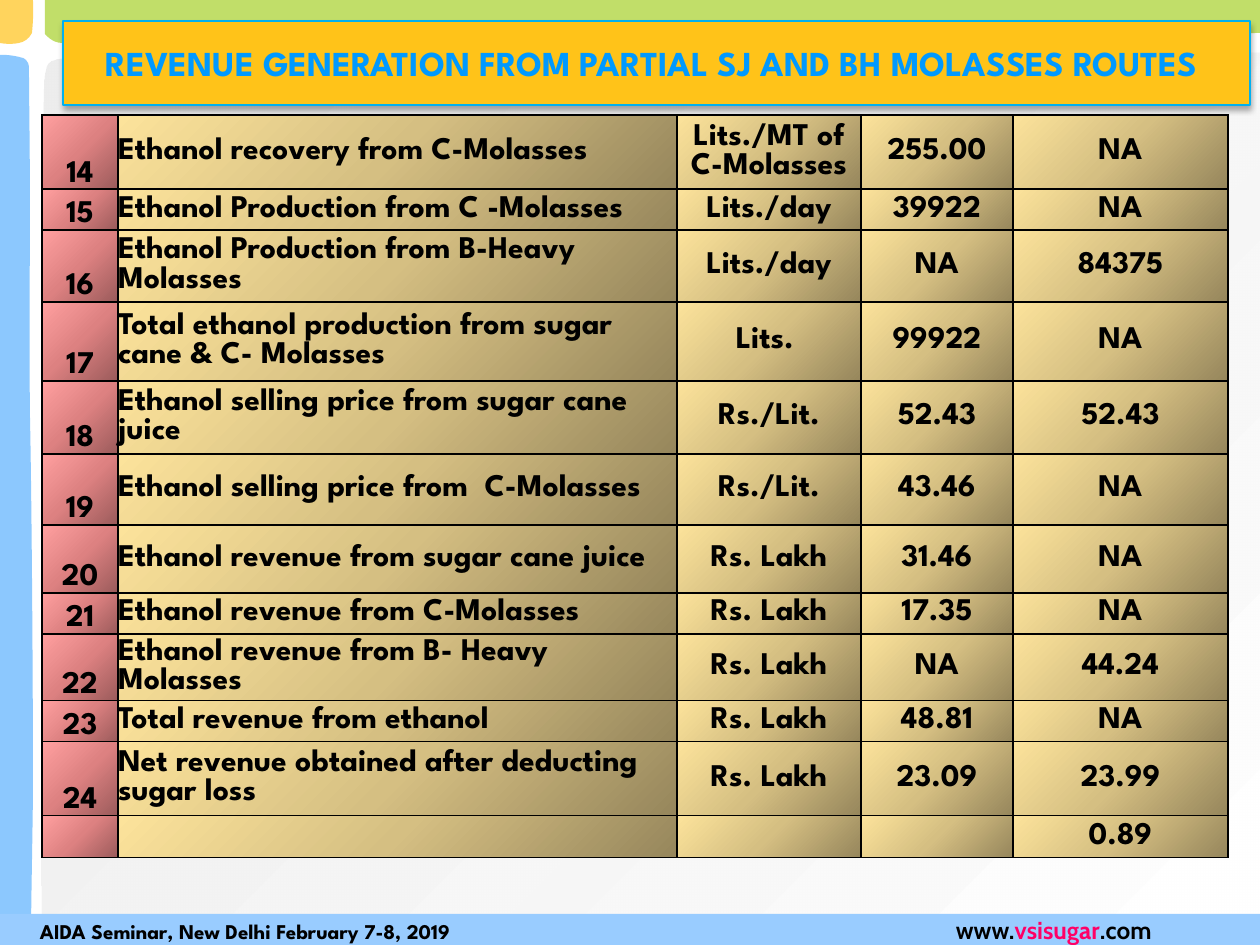
from pptx import Presentation
from pptx.dml.color import RGBColor
from pptx.enum.shapes import MSO_SHAPE
from pptx.enum.text import MSO_ANCHOR, PP_ALIGN
from pptx.oxml import parse_xml
from pptx.oxml.ns import nsdecls, qn
from pptx.util import Pt

SCALE = 914400 / 126
HEADING_FONT = "League Spartan"
ADDRESS_FONT = "Cabin"
COLORS = {
    "black": "000000", "gray": "E6E6E6", "white": "FFFFFF",
    "green": "A8D02A", "blue": "5CB1FE", "amber": "FFC319",
    "footer": "99CCFF", "pink": "FF0066", "title": "0099FF", "cyan": "00B0F0",
    "dark red": "9B5B5B", "red": "DD8181", "light red": "FFA0A0",
    "dark gold": "96865C", "gold": "D5BF82", "light gold": "FCE39B",
}
PANEL_STOPS = [(0, "gray", 70), (100, "white", 100)]
NUMBER_STOPS = [(0, "dark red", 100), (50, "red", 100), (100, "light red", 100)]
VALUE_STOPS = [(0, "dark gold", 100), (50, "gold", 100), (100, "light gold", 100)]

PANEL_OUTLINE = [
    (1220, 897), (1220, 5), (1076, 0, 1037, 5, 918, 5),
    (799, 5, 653, 6, 506, 5), (358, 4, 115, 4, 32, 9),
    (5, 12, 5, 13, 4, 44), (3, 73, 4, 91, 4, 181),
    (4, 275, 3, 471, 3, 590), (3, 709, 0, 786, 2, 897),
    (611, 897, 1220, 897, 1220, 897),
]
GREEN_OUTLINE = [
    (1215, 0), (1215, 33), (1216, 32, 1124, 39, 1003, 40),
    (882, 42, 624, 38, 492, 39), (359, 42, 289, 39, 211, 39),
    (131, 40, 52, 43, 17, 43), (7, 43, 0, 34, 0, 34),
    (0, 34, 0, 18, 0, 0), (1215, 0),
]
BLUE_OUTLINE = [
    (0, 890), (32, 891), (30, 892, 32, 826, 33, 737),
    (33, 649, 32, 459, 30, 362), (29, 266, 30, 213, 30, 156),
    (30, 98, 29, 41, 29, 14), (29, 6, 23, 4, 23, 4),
    (9, 0, 0, 1, 0, 1), (0, 890),
]
AMBER_OUTLINE = [
    (0, 0), (33, 0), (34, 15, 32, 33, 32, 33),
    (29, 39, 24, 42, 19, 43), (9, 45, 0, 43, 0, 43), (0, 0),
]

COLUMN_WIDTHS = [76, 559, 184, 152, 215]
ROW_HEIGHTS = [74, 41, 72, 79, 73, 71, 68, 41, 67, 41, 74, 42]
ROWS = [
    ("14", "Ethanol recovery from C-Molasses", "Lits./MT of C-Molasses", "255.00", "NA"),
    ("15", "Ethanol Production from C -Molasses", "Lits./day", "39922", "NA"),
    ("16", "Ethanol Production from B-Heavy Molasses", "Lits./day", "NA", "84375"),
    ("17", "Total ethanol production from sugar cane & C- Molasses", "Lits. ", "99922", "NA"),
    ("18", "Ethanol selling price from sugar cane juice", "Rs./Lit.", "52.43", "52.43"),
    ("19", "Ethanol selling price from  C-Molasses", "Rs./Lit.", "43.46", "NA"),
    ("20", "Ethanol revenue from sugar cane juice", "Rs. Lakh", "31.46", "NA"),
    ("21", "Ethanol revenue from C-Molasses", "Rs. Lakh", "17.35", "NA"),
    ("22", "Ethanol revenue from B- Heavy Molasses", "Rs. Lakh", "NA", "44.24"),
    ("23", "Total revenue from ethanol", "Rs. Lakh", "48.81", "NA"),
    ("24", "Net revenue obtained after deducting sugar loss", "Rs. Lakh", "23.09", "23.99"),
    ("", "", "", "", "0.89"),
]


def px(length):
    return round(length * SCALE)


def color(name):
    return RGBColor.from_string(COLORS[name])


def add_run(paragraph, text, size, font_name, color_name):
    run = paragraph.add_run()
    run.text = text
    run.font.size = Pt(size)
    run.font.name = font_name
    run.font.bold = True
    run.font.color.rgb = color(color_name)


def set_gradient(fill, properties, stops, angle):
    fill.background()
    stop_xml = "".join(
        f'<a:gs pos="{position * 1000}"><a:srgbClr val="{COLORS[name]}">'
        f'<a:alpha val="{opacity * 1000}"/></a:srgbClr></a:gs>'
        for position, name, opacity in stops
    )
    gradient = parse_xml(
        f'<a:gradFill {nsdecls("a")} rotWithShape="1"><a:gsLst>{stop_xml}</a:gsLst>'
        f'<a:lin ang="{angle * 60000}" scaled="0"/></a:gradFill>'
    )
    properties.replace(properties.find(qn("a:noFill")), gradient)


def set_translucent(shape, color_name):
    shape.fill.solid()
    shape.fill.fore_color.rgb = color(color_name)
    value = shape._element.spPr.find(qn("a:solidFill")).find(qn("a:srgbClr"))
    value.append(parse_xml(f'<a:alpha {nsdecls("a")} val="70000"/>'))


def add_outline(slide, left, top, outline):
    points = [
        (left + x, top + y)
        for segment in outline
        for x, y in zip(segment[::2], segment[1::2])
    ]
    builder = slide.shapes.build_freeform(*points[0], scale=SCALE)
    builder.add_line_segments(points[1:], close=True)
    shape = builder.convert_to_shape()
    lines = iter(list(shape._element.iter(qn("a:lnTo"))))
    for segment in outline[1:]:
        first = next(lines)
        if len(segment) == 6:
            curve = parse_xml(f'<a:cubicBezTo {nsdecls("a")}/>')
            first.addprevious(curve)
            for line in (first, next(lines), next(lines)):
                curve.append(line[0])
                line.getparent().remove(line)
    shape.shadow.inherit = False
    shape.line.fill.background()
    return shape


def add_backdrop(slide, left, top):
    panel = add_outline(slide, left + 40, top + 48, PANEL_OUTLINE)
    set_gradient(panel.fill, panel._element.spPr, PANEL_STOPS, 45)
    for x, y, outline, color_name in (
        (45, 0, GREEN_OUTLINE, "green"),
        (0, 54, BLUE_OUTLINE, "blue"),
        (0, 0, AMBER_OUTLINE, "amber"),
    ):
        set_translucent(add_outline(slide, left + x, top + y, outline), color_name)


def add_bar(slide, left, top, width, height, color_name):
    bar = slide.shapes.add_shape(MSO_SHAPE.RECTANGLE, px(left), px(top), px(width), px(height))
    bar.shadow.inherit = False
    bar.fill.solid()
    bar.fill.fore_color.rgb = color(color_name)
    bar.text_frame.word_wrap = True
    bar.text_frame.vertical_anchor = MSO_ANCHOR.MIDDLE
    return bar


def add_footer(slide, left, top, width, height):
    footer = add_bar(slide, left, top, width, height, "footer")
    footer.line.fill.background()
    frame = footer.text_frame
    frame.margin_left = px(40)
    frame.margin_right = frame.margin_top = frame.margin_bottom = 0
    paragraph = frame.paragraphs[0]
    paragraph.alignment = PP_ALIGN.LEFT
    paragraph._p.get_or_add_pPr().append(parse_xml(
        f'<a:tabLst {nsdecls("a")}><a:tab pos="{px(916)}" algn="l"/></a:tabLst>'
    ))
    add_run(paragraph, "AIDA Seminar, New Delhi February 7-8, 2019\t", 12, HEADING_FONT, "black")
    for text, color_name in (("www.", "black"), ("vsisugar", "pink"), (".com", "black")):
        add_run(paragraph, text, 14, ADDRESS_FONT, color_name)


def style_cell(cell, text, column):
    cell.margin_left = cell.margin_right = cell.margin_top = cell.margin_bottom = 0
    cell.vertical_anchor = MSO_ANCHOR.BOTTOM if column == 0 else MSO_ANCHOR.MIDDLE
    properties = cell._tc.get_or_add_tcPr()
    set_gradient(cell.fill, properties, NUMBER_STOPS if column == 0 else VALUE_STOPS, 225)
    for index, side in enumerate(("lnL", "lnR", "lnT", "lnB")):
        properties.insert(index, parse_xml(
            f'<a:{side} {nsdecls("a")} w="12700"><a:solidFill>'
            f'<a:srgbClr val="{COLORS["black"]}"/></a:solidFill></a:{side}>'
        ))
    paragraph = cell.text_frame.paragraphs[0]
    paragraph.alignment = PP_ALIGN.LEFT if column == 1 else PP_ALIGN.CENTER
    if text:
        add_run(paragraph, text, 18, HEADING_FONT, "black")


def add_revenue_table(slide, left, top):
    table = slide.shapes.add_table(
        len(ROWS), len(COLUMN_WIDTHS), px(left), px(top),
        px(sum(COLUMN_WIDTHS)), px(sum(ROW_HEIGHTS)),
    ).table
    table.first_row = table.horz_banding = False
    for column, width in zip(table.columns, COLUMN_WIDTHS):
        column.width = px(width)
    for row, height, texts in zip(table.rows, ROW_HEIGHTS, ROWS):
        row.height = px(height)
        for column, text in enumerate(texts):
            style_cell(row.cells[column], text, column)


def add_title(slide, left, top, width, height):
    title = add_bar(slide, left, top, width, height, "amber")
    title.line.color.rgb = color("cyan")
    title.line.width = Pt(0.75)
    title._element.spPr.find(qn("a:effectLst")).append(parse_xml(
        f'<a:outerShdw {nsdecls("a")} blurRad="{Pt(3.5)}" dist="{Pt(2.2)}" dir="5400000" '
        f'rotWithShape="0"><a:srgbClr val="{COLORS["black"]}"><a:alpha val="32000"/>'
        f'</a:srgbClr></a:outerShdw>'
    ))
    paragraph = title.text_frame.paragraphs[0]
    paragraph.alignment = PP_ALIGN.CENTER
    add_run(paragraph, "REVENUE GENERATION FROM PARTIAL SJ AND BH MOLASSES ROUTES ",
            20, HEADING_FONT, "title")


def main():
    presentation = Presentation()
    presentation.slide_width = px(1260)
    presentation.slide_height = px(945)
    slide = presentation.slides.add_slide(presentation.slide_layouts[6])
    add_backdrop(slide, 0, 0)
    add_footer(slide, 0, 914, 1260, 31)
    add_revenue_table(slide, 42, 115)
    add_title(slide, 63, 21, 1187, 84)
    presentation.save("out.pptx")


if __name__ == "__main__":
    main()
